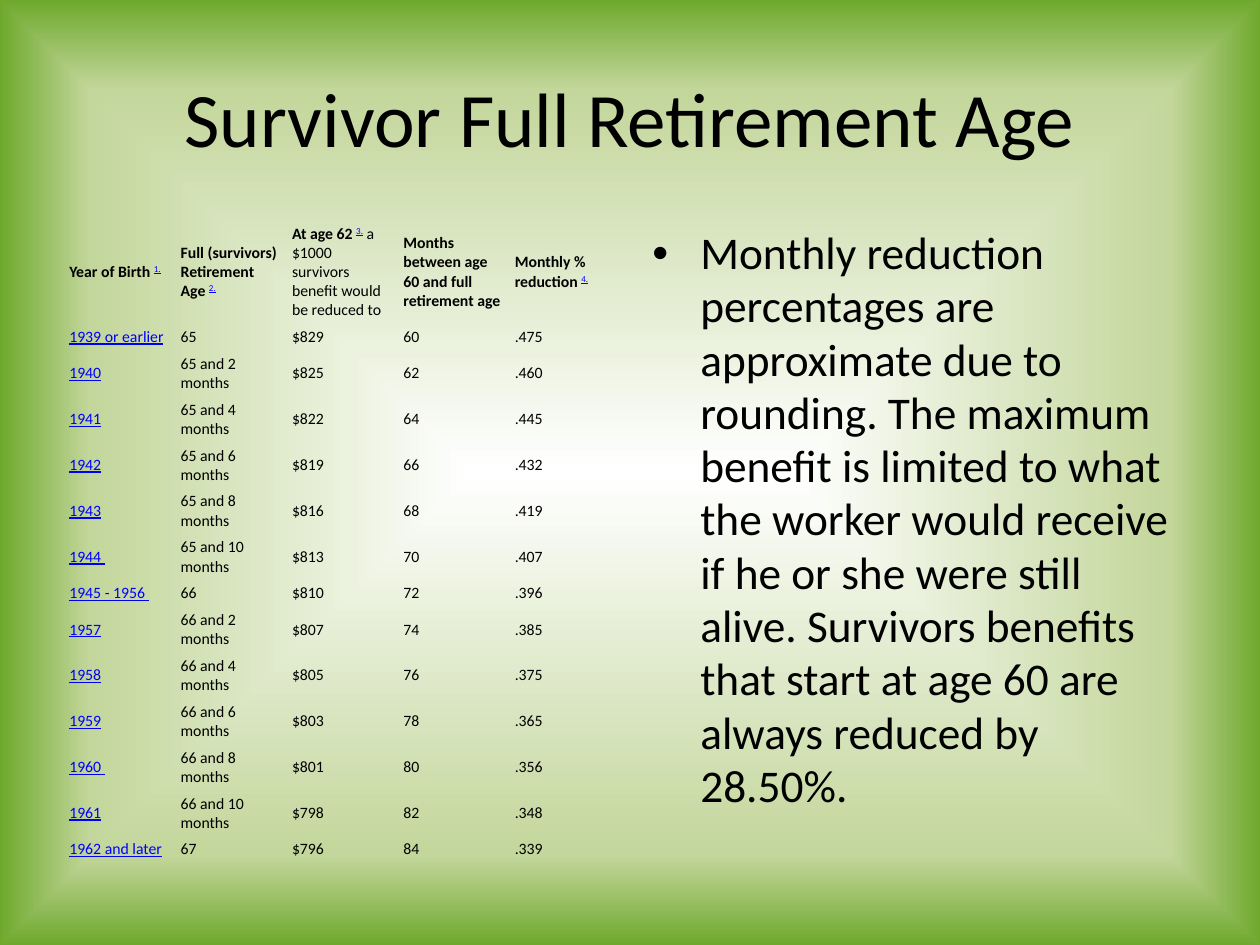
"""Build the survivor full retirement age slide: a reduction table beside a note."""
from lxml import etree
from pptx import Presentation
from pptx.dml.color import RGBColor
from pptx.enum.text import MSO_ANCHOR, PP_ALIGN
from pptx.oxml import parse_xml
from pptx.oxml.ns import qn
from pptx.util import Pt

PX = 9144
MIDDLE = MSO_ANCHOR.MIDDLE
CENTER = PP_ALIGN.CENTER
FONT = "Calibri"
NO_GRID = "{2D5ABB26-0587-4C30-8999-92F81FD0307C}"
COLORS = {"text": "000000", "link": "0000FF", "white": "FFFFFF", "pale": "C3D69B", "green": "6EA92D"}


def add_run(p, text, size, kind=""):
    r = p.add_run()
    r.text = text
    r.font.name = FONT
    r.font.size = Pt(size)
    r.font.bold = kind == "bold"
    r.font.underline = kind in ("link", "note")
    r.font.color.rgb = RGBColor.from_string(COLORS["link" if r.font.underline else "text"])
    if kind == "note":
        r.font._element.set("baseline", "30000")


prs = Presentation()
prs.slide_width, prs.slide_height = 1000 * PX, 750 * PX
s = prs.slides.add_slide(prs.slide_layouts[5])

s.background.fill.gradient()
grad = s.element.xpath(".//p:bgPr/a:gradFill")[0]
grad.getparent().replace(grad, parse_xml(f"""
<a:gradFill xmlns:a="http://schemas.openxmlformats.org/drawingml/2006/main" rotWithShape="1">
  <a:gsLst>
    <a:gs pos="0"><a:srgbClr val="{COLORS['white']}"><a:alpha val="61000"/></a:srgbClr></a:gs>
    <a:gs pos="81000"><a:srgbClr val="{COLORS['pale']}"/></a:gs>
    <a:gs pos="100000"><a:srgbClr val="{COLORS['green']}"/></a:gs>
  </a:gsLst>
  <a:path path="shape"><a:fillToRect l="50000" t="50000" r="50000" b="50000"/></a:path>
</a:gradFill>"""))

title = s.shapes.title
title.left, title.top, title.width, title.height = 50 * PX, 30 * PX, 900 * PX, 125 * PX
tf = title.text_frame
tf.vertical_anchor = MIDDLE
tf.paragraphs[0].alignment = CENTER
add_run(tf.paragraphs[0], "Survivor Full Retirement Age", 44)

header = [
    [("Year of Birth\u00a0", "bold"), ("1.", "note"), (" ", "")],
    [("Full (survivors) Retirement Age ", "bold"), ("2.", "note"), (" ", "")],
    [("At age 62\u00a0", "bold"), ("3.", "note"), (" a $1000 survivors benefit would be reduced to", "")],
    [("Months between age 60 and full retirement age", "bold")],
    [("Monthly % reduction\u00a0", "bold"), ("4.", "note"), (" ", "")],
]
births = ["1939 or earlier", "1940", "1941", "1942", "1943", "1944\u00a0", "1945 - 1956\u00a0",
          "1957", "1958", "1959", "1960\u00a0", "1961", "1962 and later"]
benefits = [829, 825, 822, 819, 816, 813, 810, 807, 805, 803, 801, 798, 796]
reductions = [".475", ".460", ".445", ".432", ".419", ".407", ".396",
              ".385", ".375", ".365", ".356", ".348", ".339"]

rows = [header]
for i, (birth, benefit, reduction) in enumerate(zip(births, benefits, reductions)):
    years, months = 65 + i // 6, i % 6 * 2
    age = f"{years} and {months} months" if months else str(years)
    plain = [age, f"${benefit}", str(60 + 2 * i), reduction]
    rows.append([[(birth, "link")]] + [[(text, "")] for text in plain])

heights = [81] + [35 if i % 6 else 20 for i in range(len(births))]
frame = s.shapes.add_table(len(rows), len(header), 50 * PX, 175 * PX, 442 * PX, sum(heights) * PX)
table = frame.table
table.first_row = table.horz_banding = False
table._tbl.tblPr.find(qn("a:tableStyleId")).text = NO_GRID
for col in table.columns:
    col.width = 442 * PX // len(header)
for row, height, cells in zip(table.rows, heights, rows):
    row.height = height * PX
    for cell, runs in zip(row.cells, cells):
        cell.fill.background()
        cell.vertical_anchor = MIDDLE
        cell.margin_left = cell.margin_right = 5 * PX
        cell.margin_top = cell.margin_bottom = 3 * PX
        for text, kind in runs:
            add_run(cell.text_frame.paragraphs[0], text, 9, kind)

sp = s.shapes.add_textbox(508 * PX, 175 * PX, 442 * PX, 495 * PX)
tf = sp.text_frame
tf.word_wrap = True
p = tf.paragraphs[0]
p.space_before = Pt(5)
p.line_spacing = 0.98
add_run(p, "Monthly reduction percentages are approximate due to rounding. The maximum benefit is "
           "limited to what the worker would receive if he or she were still alive. Survivors "
           "benefits that start at age 60 are always reduced by 28.50%.", 25.9)
pPr = p._p.get_or_add_pPr()
pPr.set("marL", str(38 * PX))
pPr.set("indent", str(-38 * PX))
etree.SubElement(pPr, qn("a:buFont")).set("typeface", "Arial")
etree.SubElement(pPr, qn("a:buChar")).set("char", "•")

prs.save("out.pptx")
